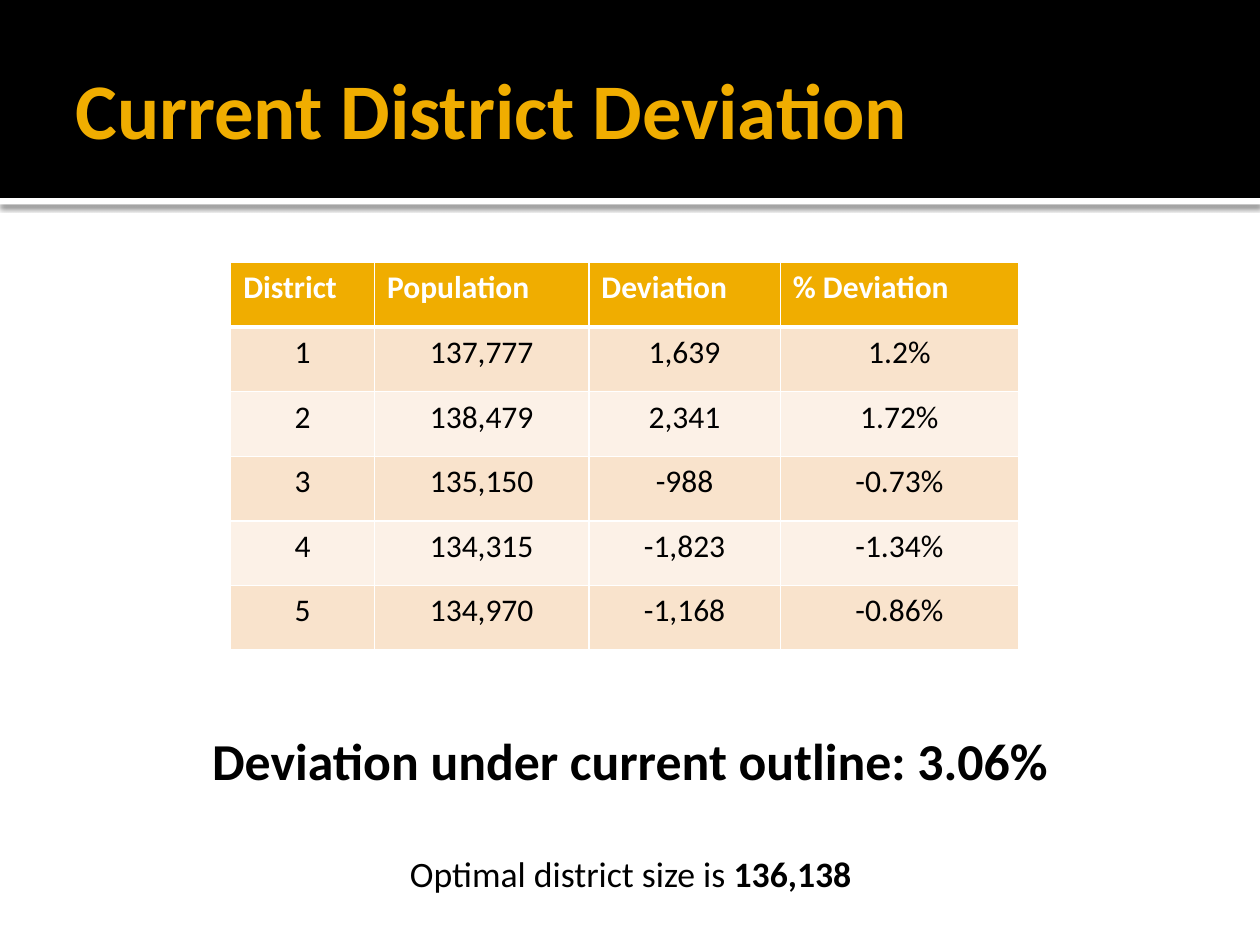
from lxml.etree import SubElement
from pptx import Presentation
from pptx.dml.color import RGBColor
from pptx.enum.shapes import MSO_SHAPE
from pptx.enum.text import MSO_ANCHOR, MSO_AUTO_SIZE, PP_ALIGN
from pptx.oxml.ns import qn
from pptx.util import Cm, Pt

FONT = "Calibri"
BLACK = RGBColor(0x00, 0x00, 0x00)
WHITE = RGBColor(0xFF, 0xFF, 0xFF)
AMBER = RGBColor(0xF0, 0xAD, 0x00)
PEACH = RGBColor(0xF9, 0xE3, 0xCC)
CREAM = RGBColor(0xFC, 0xF1, 0xE7)

SLIDE_WIDTH, SLIDE_HEIGHT = Cm(25.4), Cm(19.05)
COLUMN_WIDTHS = [Cm(2.9), Cm(4.32), Cm(3.86), Cm(4.8)]
HEADINGS = ["District", "Population", "Deviation", "% Deviation"]
DISTRICTS = [
    ["1", "137,777", "1,639", "1.2%"],
    ["2", "138,479", "2,341", "1.72%"],
    ["3", "135,150", "-988", "-0.73%"],
    ["4", "134,315", "-1,823", "-1.34%"],
    ["5", "134,970", "-1,168", "-0.86%"],
]


def add_text(paragraph, text, size=18, color=BLACK, bold=False, align=PP_ALIGN.LEFT):
    paragraph.alignment = align
    run = paragraph.add_run()
    run.text = text
    run.font.name = FONT
    run.font.size = Pt(size)
    run.font.bold = bold
    run.font.color.rgb = color


def place(shape, left, top, width, height):
    shape.left, shape.top, shape.width, shape.height = left, top, width, height


def set_frame(frame, anchor, left, top, right, bottom):
    frame.word_wrap = True
    frame.auto_size = MSO_AUTO_SIZE.NONE
    frame.vertical_anchor = anchor
    frame.margin_left, frame.margin_top = left, top
    frame.margin_right, frame.margin_bottom = right, bottom


def add_band(slide, left, top, width, height, color, depth):
    band = slide.shapes.add_shape(MSO_SHAPE.RECTANGLE, left, top, width, height)
    band.fill.solid()
    band.fill.fore_color.rgb = color
    band.line.fill.background()
    band.shadow.inherit = False
    # Bands lie behind the placeholders
    slide.shapes._spTree.insert(2 + depth, band._element)
    return band


def add_drop_shadow(shape):
    effects = shape._element.spPr.find(qn("a:effectLst"))
    shadow = SubElement(effects, qn("a:outerShdw"), blurRad=str(Pt(2.5)),
                        dist=str(Cm(0.08)), dir="5400000", rotWithShape="0")
    color = SubElement(shadow, qn("a:srgbClr"), val=str(BLACK))
    SubElement(color, qn("a:alpha"), val="60000")


def build_header(slide, left, top, width, height):
    # Black band over a thin white strip with a shadow
    strip = add_band(slide, left, top + height, width, Cm(0.13), WHITE, 0)
    add_drop_shadow(strip)
    add_band(slide, left, top, width, height, BLACK, 1)

    title = slide.shapes.title
    place(title, left + Cm(1.27), top + Cm(0.43), width - Cm(2.54), Cm(3.48))
    set_frame(title.text_frame, MSO_ANCHOR.MIDDLE, Cm(0.25), Cm(0.13), Cm(0.13), Cm(0.13))
    add_text(title.text_frame.paragraphs[0], "Current District Deviation",
             size=45, color=AMBER, bold=True)


def set_borders(cell, row):
    # The rule under the heading row is thicker
    widths = {"L": 1, "R": 1, "T": 3 if row == 1 else 1, "B": 3 if row == 0 else 1}
    properties = cell._tc.get_or_add_tcPr()
    for side, width in widths.items():
        line = SubElement(properties, qn(f"a:ln{side}"), w=str(Pt(width)))
        fill = SubElement(line, qn("a:solidFill"))
        SubElement(fill, qn("a:srgbClr"), val=str(WHITE))


def build_district_table(slide, left, top, width, height):
    rows = [HEADINGS] + DISTRICTS
    table = slide.shapes.add_table(len(rows), len(HEADINGS), left, top, width, height).table
    for column, column_width in zip(table.columns, COLUMN_WIDTHS):
        column.width = column_width
    for r, values in enumerate(rows):
        heading = r == 0
        fill_color = AMBER if heading else (PEACH if r % 2 else CREAM)
        for c, value in enumerate(values):
            cell = table.cell(r, c)
            set_borders(cell, r)
            cell.fill.solid()
            cell.fill.fore_color.rgb = fill_color
            add_text(cell.text_frame.paragraphs[0], value, bold=heading,
                     color=WHITE if heading else BLACK,
                     align=PP_ALIGN.LEFT if heading else PP_ALIGN.CENTER)


def build_summary(slide, left, top, width, height):
    summary = slide.placeholders[1]
    place(summary, left, top, width, height)
    frame = summary.text_frame
    set_frame(frame, MSO_ANCHOR.TOP, Cm(0.48), Cm(1.55), Cm(0.25), Cm(0))
    deviation, optimum = frame.paragraphs[0], frame.add_paragraph()
    for paragraph, gap in ((deviation, 0), (optimum, 35)):
        paragraph.space_before = Pt(gap)
        properties = paragraph._p.get_or_add_pPr()
        properties.set("marL", "0")
        properties.set("indent", "0")
        SubElement(properties, qn("a:buNone"))
    add_text(deviation, "Deviation under current outline: 3.06%",
             size=29.6, bold=True, align=PP_ALIGN.CENTER)
    add_text(optimum, "Optimal district size is", size=20.4, align=PP_ALIGN.CENTER)
    add_text(optimum, " 136,138", size=20.4, bold=True, align=PP_ALIGN.CENTER)


def main():
    presentation = Presentation()
    presentation.slide_width, presentation.slide_height = SLIDE_WIDTH, SLIDE_HEIGHT
    slide = presentation.slides.add_slide(presentation.slide_layouts[1])
    build_header(slide, Cm(0), Cm(0), SLIDE_WIDTH, Cm(3.99))
    build_summary(slide, Cm(1.27), Cm(13.13), Cm(22.66), Cm(4.65))
    build_district_table(slide, Cm(4.65), Cm(5.29), sum(COLUMN_WIDTHS), Cm(7.82))
    presentation.save("out.pptx")


if __name__ == "__main__":
    main()
